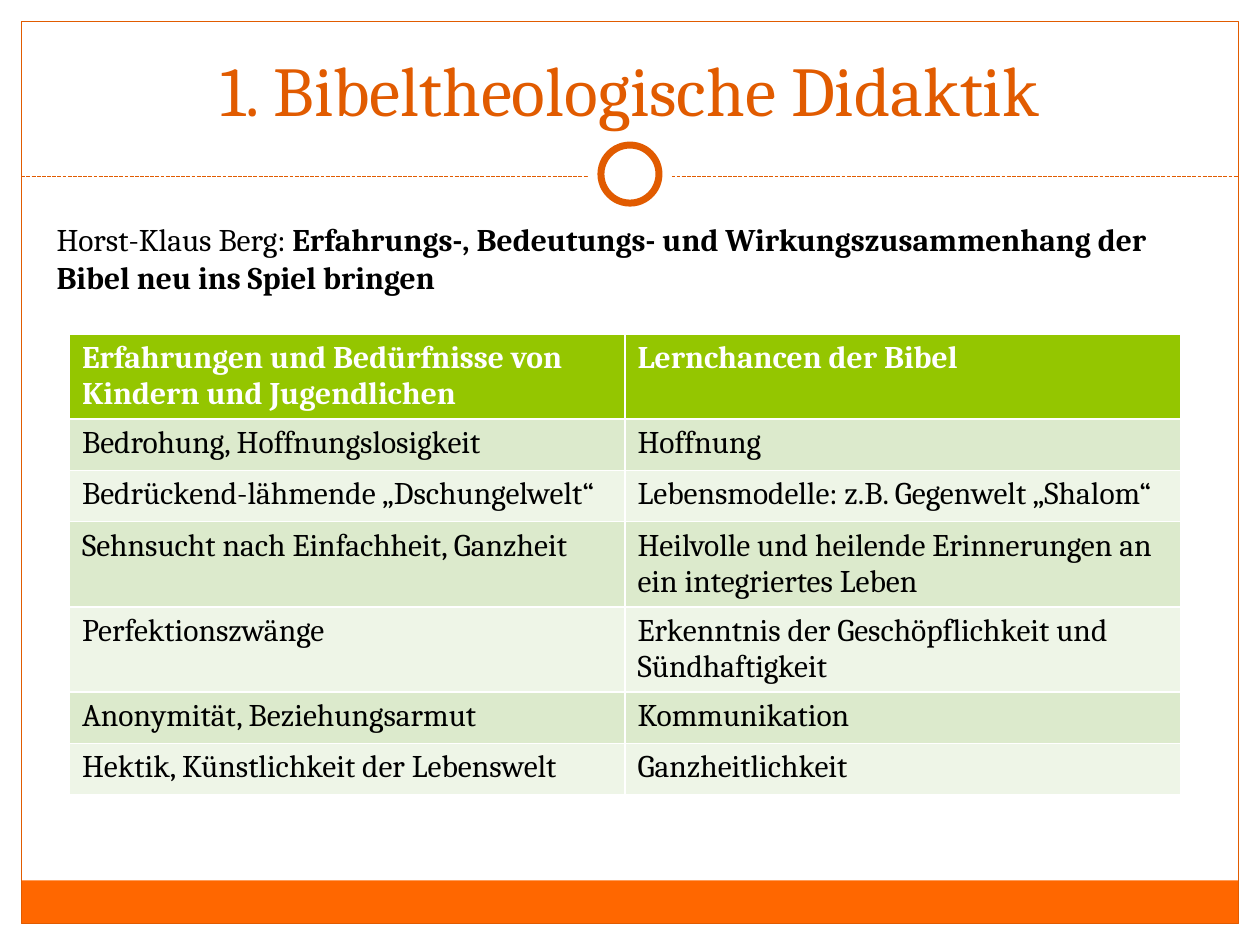
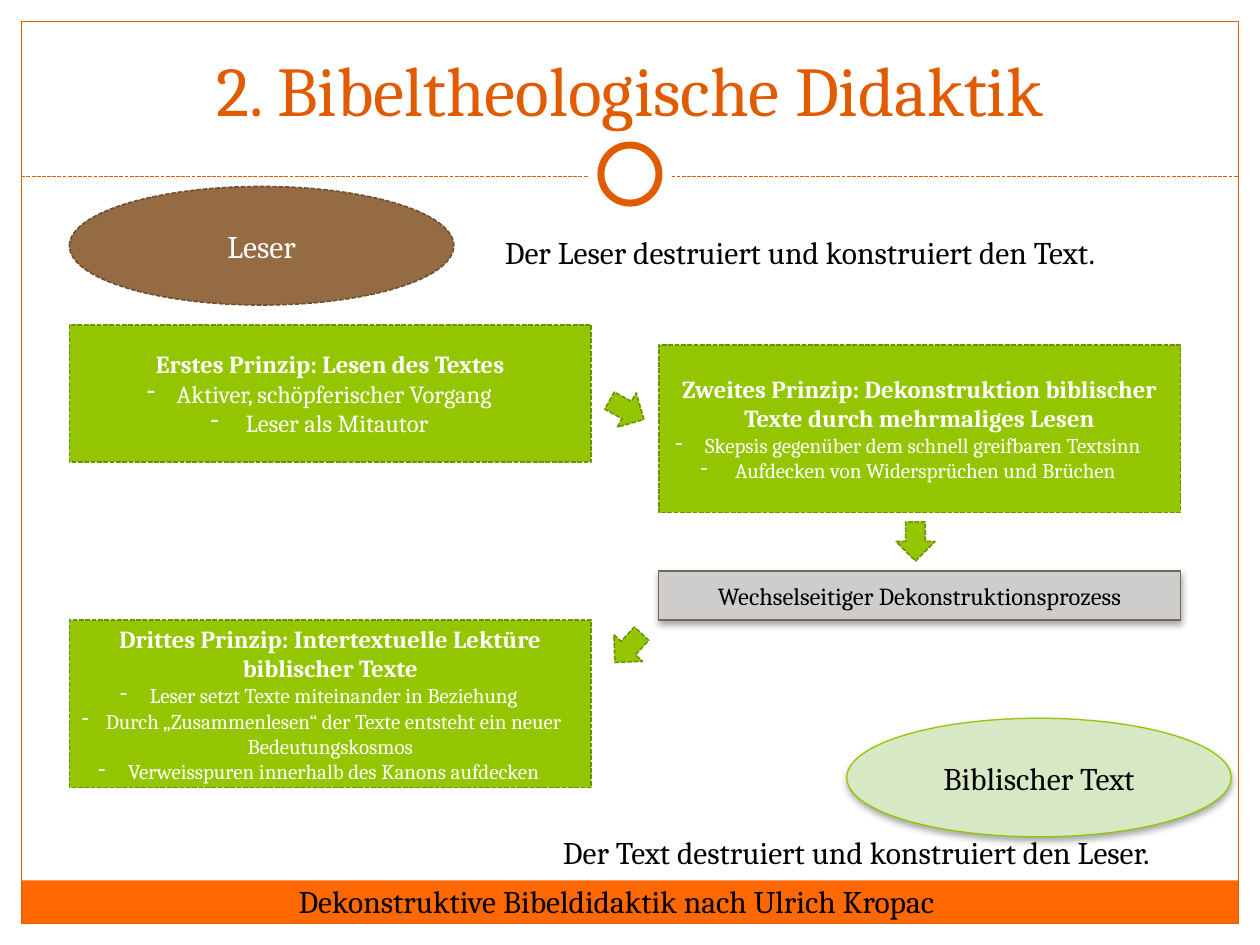
from dataclasses import dataclass
from typing import NamedTuple, Optional

from lxml.etree import SubElement
from pptx import Presentation
from pptx.dml.color import RGBColor
from pptx.enum.dml import MSO_LINE
from pptx.enum.shapes import MSO_CONNECTOR, MSO_SHAPE
from pptx.enum.text import MSO_ANCHOR, MSO_AUTO_SIZE, PP_ALIGN
from pptx.oxml.ns import qn
from pptx.util import Cm, Pt

FONT = "Cambria"
BLACK, WHITE = "000000", "FFFFFF"
ORANGE, BAND_ORANGE = "E15B00", "FF6700"
GREEN, DARK_GREEN, PALE_GREEN = "94C600", "6D9200", "D7E8C5"
BROWN, DARK_BROWN = "956B43", "6E4F32"
GREY, DARK_GREY = "CFCDCB", "71685A"
ROW_FILLS = ("DCEACC", "EEF5E7")

PAGE_WIDTH, PAGE_HEIGHT = 25.4, 19.05
MARGIN = 0.43
DIVIDER_TOP = 3.56
LEFT_COLUMN, RIGHT_COLUMN = 1.4, 13.28
BOX_WIDTH = 10.52


class Area(NamedTuple):
    left: float
    top: float
    width: float
    height: float

    def lengths(self) -> list:
        return [Cm(value) for value in self]


class Span(NamedTuple):
    text: str
    size: float = 18
    color: str = BLACK
    bold: bool = False


class Para(NamedTuple):
    spans: tuple
    centred: bool = False
    bulleted: bool = False


@dataclass(frozen=True)
class Look:
    fill: Optional[str] = None
    line: Optional[str] = None
    line_width: float = 0.75
    dashed: bool = False
    shadow: bool = False


@dataclass(frozen=True)
class Panel:
    area: Area
    look: Look
    paras: tuple = ()
    kind: MSO_SHAPE = MSO_SHAPE.RECTANGLE
    rotation: float = 0


PRINCIPLE = Look(GREEN, DARK_GREEN, 0.9, dashed=True)
READER = Look(BROWN, DARK_BROWN, 0.9, dashed=True)
PROCESS = Look(GREY, DARK_GREY, shadow=True)
BIBLE_TEXT = Look(PALE_GREEN, GREEN, shadow=True)

NEEDS_AND_CHANCES = (
    ("Erfahrungen und Bedürfnisse von Kindern und Jugendlichen", "Lernchancen der Bibel"),
    ("Bedrohung, Hoffnungslosigkeit", "Hoffnung"),
    ("Bedrückend-lähmende „Dschungelwelt“", "Lebensmodelle: z.B. Gegenwelt „Shalom“"),
    ("Sehnsucht nach Einfachheit, Ganzheit",
     "Heilvolle und heilende Erinnerungen an ein integriertes Leben"),
    ("Perfektionszwänge", "Erkenntnis der Geschöpflichkeit und Sündhaftigkeit"),
    ("Anonymität, Beziehungsarmut", "Kommunikation"),
    ("Hektik, Künstlichkeit der Lebenswelt", "Ganzheitlichkeit"),
)


def rgb(color: str) -> RGBColor:
    return RGBColor.from_string(color)


def write(frame, paras: tuple) -> None:
    for index, para in enumerate(paras):
        paragraph = frame.paragraphs[0] if index == 0 else frame.add_paragraph()
        paragraph.alignment = PP_ALIGN.CENTER if para.centred else PP_ALIGN.LEFT
        if para.bulleted:
            properties = paragraph._p.get_or_add_pPr()
            SubElement(properties, qn("a:buFontTx"))
            SubElement(properties, qn("a:buChar"), char="-")
        for span in para.spans:
            run = paragraph.add_run()
            run.text = span.text
            run.font.name = FONT
            run.font.size = Pt(span.size)
            run.font.bold = span.bold
            run.font.color.rgb = rgb(span.color)


def add_soft_shadow(shape) -> None:
    effects = shape._element.spPr.find(qn("a:effectLst"))
    shadow = SubElement(effects, qn("a:outerShdw"), blurRad=str(Pt(4)),
                        dist=str(Pt(2)), dir="5400000", rotWithShape="0")
    color = SubElement(shadow, qn("a:srgbClr"), val=BLACK)
    SubElement(color, qn("a:alpha"), val="35000")


def add_panel(page, panel: Panel) -> None:
    look = panel.look
    shape = page.shapes.add_shape(panel.kind, *panel.area.lengths())
    shape.rotation = panel.rotation
    if look.fill:
        shape.fill.solid()
        shape.fill.fore_color.rgb = rgb(look.fill)
    else:
        shape.fill.background()
    if look.line:
        shape.line.color.rgb = rgb(look.line)
        shape.line.width = Pt(look.line_width)
        if look.dashed:
            shape.line.dash_style = MSO_LINE.SQUARE_DOT
    else:
        shape.line.fill.background()
    shape.shadow.inherit = False
    if look.shadow:
        add_soft_shadow(shape)
    if panel.paras:
        shape.text_frame.word_wrap = True
        shape.text_frame.vertical_anchor = MSO_ANCHOR.MIDDLE
        write(shape.text_frame, panel.paras)


def add_text(page, area: Area, para: Para, wrap: bool = True,
             anchor: MSO_ANCHOR = MSO_ANCHOR.TOP) -> None:
    frame = page.shapes.add_textbox(*area.lengths()).text_frame
    frame.word_wrap = wrap
    frame.auto_size = MSO_AUTO_SIZE.NONE if wrap else MSO_AUTO_SIZE.SHAPE_TO_FIT_TEXT
    frame.vertical_anchor = anchor
    write(frame, (para,))


def add_divider(page) -> None:
    divider = page.shapes.add_connector(
        MSO_CONNECTOR.STRAIGHT, Cm(MARGIN), Cm(DIVIDER_TOP),
        Cm(PAGE_WIDTH - MARGIN), Cm(DIVIDER_TOP))
    divider.line.color.rgb = rgb(ORANGE)
    divider.line.width = Pt(0.75)
    divider.line.dash_style = MSO_LINE.SQUARE_DOT
    SubElement(divider._element.spPr, qn("a:effectLst"))


def add_ring_disc(page, diameter: float, look: Look) -> None:
    """Draw a disc centred on the ring that interrupts the divider."""
    area = Area((PAGE_WIDTH - diameter) / 2, 3.51 - diameter / 2, diameter, diameter)
    add_panel(page, Panel(area, look, kind=MSO_SHAPE.OVAL))


def add_page(deck, title: str):
    """Add a blank page with the shared frame, band, divider, ring and title."""
    page = deck.slides.add_slide(deck.slide_layouts[6])
    inner_width = PAGE_WIDTH - 2 * MARGIN
    add_panel(page, Panel(Area(MARGIN, 17.75, inner_width, 0.87), Look(BAND_ORANGE)))
    add_panel(page, Panel(Area(MARGIN, MARGIN, inner_width, PAGE_HEIGHT - 2 * MARGIN),
                          Look(line=ORANGE)))
    add_divider(page)
    add_ring_disc(page, 1.7, Look(WHITE))
    add_ring_disc(page, 1.17, Look(WHITE, ORANGE, 4))
    add_text(page, Area(0.85, 0.64, 23.7, 2.11),
             Para((Span(title, 40, ORANGE),), centred=True), anchor=MSO_ANCHOR.BOTTOM)
    return page


def add_needs_table(page) -> None:
    rows, columns = len(NEEDS_AND_CHANCES), len(NEEDS_AND_CHANCES[0])
    area = Area(LEFT_COLUMN, 6.73, 22.4, 1.03 * rows)
    table = page.shapes.add_table(rows, columns, *area.lengths()).table
    for row, texts in enumerate(NEEDS_AND_CHANCES):
        header = row == 0
        for column, text in enumerate(texts):
            cell = table.cell(row, column)
            cell.fill.solid()
            cell.fill.fore_color.rgb = rgb(GREEN if header else ROW_FILLS[(row - 1) % 2])
            color = WHITE if header else BLACK
            write(cell.text_frame, (Para((Span(text, color=color, bold=header),)),))


def caption(text: str, size: float = 18, color: str = BLACK) -> tuple:
    return (Para((Span(text, size, color),), centred=True),)


def principle(area: Area, heading: str, points: tuple, point_size: float = 12) -> Panel:
    head = Para((Span(heading, 14, WHITE, True),), centred=True)
    items = [Para((Span(point, point_size, WHITE),), True, True) for point in points]
    return Panel(area, PRINCIPLE, (head, *items))


def arrow(left: float, top: float, rotation: float = 0) -> Panel:
    return Panel(Area(left, top, 0.79, 0.79), PRINCIPLE,
                 kind=MSO_SHAPE.DOWN_ARROW, rotation=rotation)


def build_learning_page(deck) -> None:
    page = add_page(deck, "1. Bibeltheologische Didaktik")
    add_text(page, Area(0.89, 4.32, 23.4, 1.8), Para((
        Span("Horst-Klaus Berg: "),
        Span("Erfahrungs-, Bedeutungs- und Wirkungszusammenhang der Bibel "
             "neu ins Spiel bringen", bold=True))))
    add_needs_table(page)


def build_deconstruction_page(deck) -> None:
    page = add_page(deck, "2. Bibeltheologische Didaktik")
    panels = (
        principle(Area(LEFT_COLUMN, 6.55, BOX_WIDTH, 2.77),
                  "Erstes Prinzip: Lesen des Textes",
                  ("Aktiver, schöpferischer Vorgang", " Leser als Mitautor"), 14),
        principle(Area(RIGHT_COLUMN, 6.95, BOX_WIDTH, 3.38),
                  "Zweites Prinzip: Dekonstruktion biblischer Texte durch mehrmaliges Lesen",
                  ("Skepsis gegenüber dem schnell greifbaren Textsinn",
                   " Aufdecken von Widersprüchen und Brüchen")),
        principle(Area(LEFT_COLUMN, 12.5, BOX_WIDTH, 3.38),
                  "Drittes Prinzip: Intertextuelle Lektüre biblischer Texte",
                  ("Leser setzt Texte miteinander in Beziehung",
                   "Durch „Zusammenlesen“ der Texte entsteht ein neuer Bedeutungskosmos",
                   "Verweisspuren innerhalb des Kanons aufdecken")),
        Panel(Area(RIGHT_COLUMN, 11.51, BOX_WIDTH, 0.99), PROCESS,
              caption("Wechselseitiger Dekonstruktionsprozess", 14)),
        Panel(Area(LEFT_COLUMN, 3.76, 7.75, 2.39), READER,
              caption("Leser", color=WHITE), MSO_SHAPE.OVAL),
        Panel(Area(17.07, 14.48, 7.75, 2.39), BIBLE_TEXT,
              caption("Biblischer Text"), MSO_SHAPE.OVAL),
        arrow(12.24, 7.87, 298.7),
        arrow(18.06, 10.52),
        arrow(12.27, 12.67, 42.9),
    )
    for panel in panels:
        add_panel(page, panel)
    remarks = (
        (9.93, 4.57, 13.64, "Der Leser destruiert und konstruiert den Text."),
        (11.1, 16.66, 13.64, "Der Text destruiert und konstruiert den Leser."),
        (5.77, 17.65, 14.66, "Dekonstruktive Bibeldidaktik nach Ulrich Kropac"),
    )
    for left, top, width, text in remarks:
        add_text(page, Area(left, top, width, 1.02), Para((Span(text),)), wrap=False)


def main() -> None:
    deck = Presentation()
    deck.slide_width, deck.slide_height = Cm(PAGE_WIDTH), Cm(PAGE_HEIGHT)
    build_learning_page(deck)
    build_deconstruction_page(deck)
    deck.save("out.pptx")


if __name__ == "__main__":
    main()
